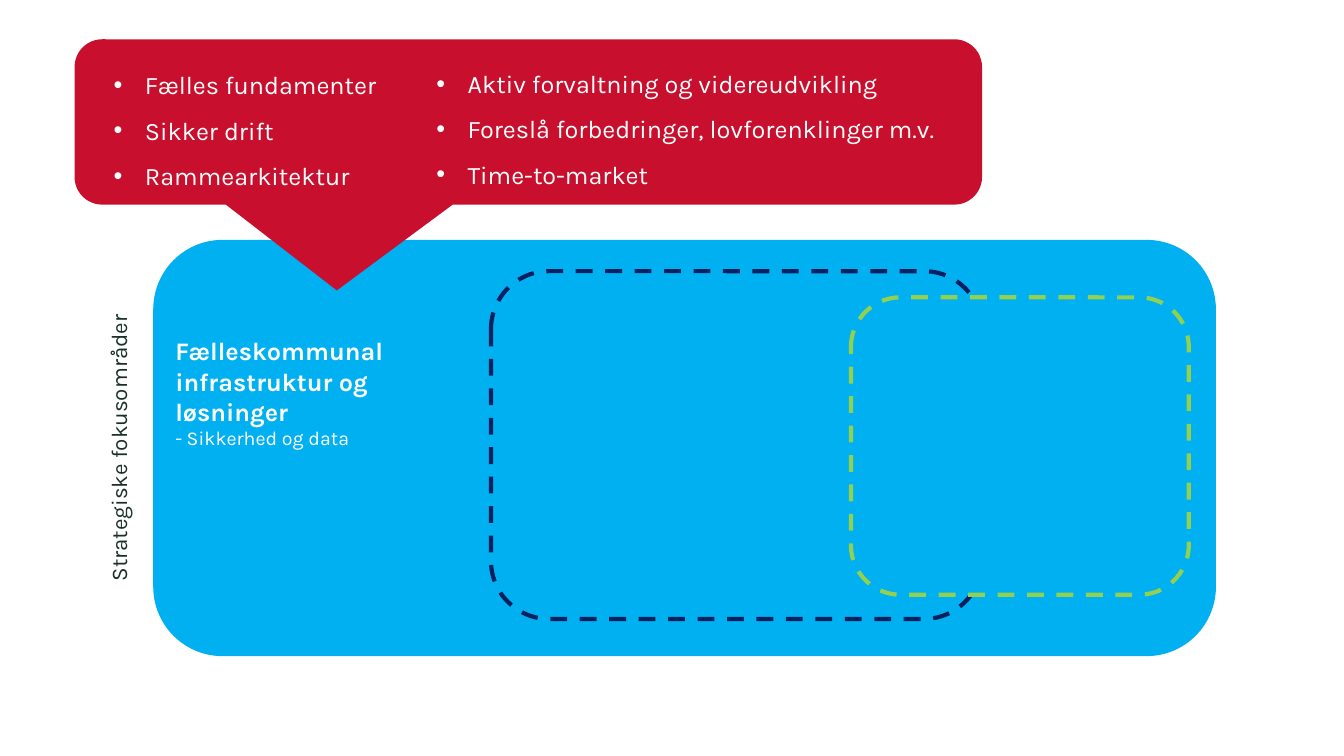
from dataclasses import dataclass

from lxml import etree
from pptx import Presentation
from pptx.dml.color import RGBColor
from pptx.enum import dml, shapes, text
from pptx.oxml.ns import qn
from pptx.util import Inches, Pt


@dataclass(frozen=True)
class Theme:
    font: str = "Karla"
    white: str = "FFFFFF"
    dark: str = "183028"
    blue: str = "00B0F0"
    navy: str = "002060"
    green: str = "92D050"
    red: str = "C8102E"
    body: int = 18
    label: int = 16
    small: int = 14
    outline: int = 3
    bullet_indent: float = 0.31


class SlideBuilder:
    def __init__(self, slide, theme):
        self.slide = slide
        self.theme = theme

    def panel(self, kind, box, fill=None, dash=None, adjustments=()):
        """Draw a preset shape; dash is the colour of a dashed outline."""
        shape = self.slide.shapes.add_shape(kind, *map(Inches, box))
        shape.shadow.inherit = False
        for index, value in enumerate(adjustments):
            shape.adjustments[index] = value
        if fill:
            shape.fill.solid()
            shape.fill.fore_color.rgb = RGBColor.from_string(fill)
        else:
            shape.fill.background()
        if dash:
            shape.line.color.rgb = RGBColor.from_string(dash)
            shape.line.width = Pt(self.theme.outline)
            shape.line.dash_style = dml.MSO_LINE.DASH
        else:
            shape.line.fill.background()

    def text_box(self, box, lines, rotation=0, bullets=False, **layout):
        """Write one paragraph per (wording, font format) pair."""
        shape = self.slide.shapes.add_textbox(*map(Inches, box))
        shape.rotation = rotation
        frame = shape.text_frame
        frame.word_wrap = True
        for index, (wording, font_format) in enumerate(lines):
            paragraph = frame.add_paragraph() if index else frame.paragraphs[0]
            paragraph.text = wording
            for name, value in layout.items():
                setattr(paragraph, name, value)
            if bullets:
                self.add_bullet(paragraph)
            self.format_font(paragraph.runs[0].font, font_format)

    def format_font(self, font, font_format):
        values = {"name": self.theme.font, "size": Pt(self.theme.body), "bold": False}
        values.update(font_format)
        color = values.pop("color", self.theme.white)
        for name, value in values.items():
            setattr(font, name, value)
        font.color.rgb = RGBColor.from_string(color)

    def add_bullet(self, paragraph):
        properties = paragraph._p.get_or_add_pPr()
        indent = Inches(self.theme.bullet_indent)
        properties.set("marL", str(indent))
        properties.set("indent", str(-indent))
        etree.SubElement(properties, qn("a:buFont"), typeface="Arial")
        etree.SubElement(properties, qn("a:buChar"), char="•")

    def bullet_list(self, box, items):
        self.text_box(box, [(item, {}) for item in items], bullets=True, line_spacing=1.5)


def main():
    presentation = Presentation()
    presentation.slide_width = Inches(13.33)
    presentation.slide_height = Inches(7.5)
    theme = Theme()
    builder = SlideBuilder(presentation.slides.add_slide(presentation.slide_layouts[6]), theme)
    rounded = shapes.MSO_SHAPE.ROUNDED_RECTANGLE
    callout = shapes.MSO_SHAPE.ROUNDED_RECTANGULAR_CALLOUT

    builder.panel(rounded, (1.52, 2.38, 10.54, 4.13), fill=theme.blue)
    builder.panel(rounded, (4.87, 2.69, 4.87, 3.45), dash=theme.navy)
    builder.panel(rounded, (8.44, 2.95, 3.35, 2.95), fill=theme.blue, dash=theme.green)
    builder.text_box((1.64, 3.28, 3.1, 1.25), [
        ("Fælleskommunal infrastruktur og løsninger", {"bold": True}),
        ("- Sikkerhed og data", {"size": Pt(theme.small)}),
    ])

    builder.panel(callout, (0.74, 0.39, 9, 1.64), fill=theme.red,
                  adjustments=(-0.211, 1.019, 0.167))
    builder.bullet_list((1.03, 0.49, 3.7, 1.77),
                        ["Fælles fundamenter", "Sikker drift", "Rammearkitektur"])
    builder.bullet_list((4.23, 0.48, 5.91, 1.46), [
        "Aktiv forvaltning og videreudvikling",
        "Foreslå forbedringer, lovforenklinger m.v.",
        "Time-to-market",
    ])

    builder.text_box((-0.89, 4.26, 4.13, 0.37), [
        ("Strategiske fokusområder", {"size": Pt(theme.label), "color": theme.dark}),
    ], rotation=270, alignment=text.PP_ALIGN.CENTER)

    presentation.save("out.pptx")


if __name__ == "__main__":
    main()
